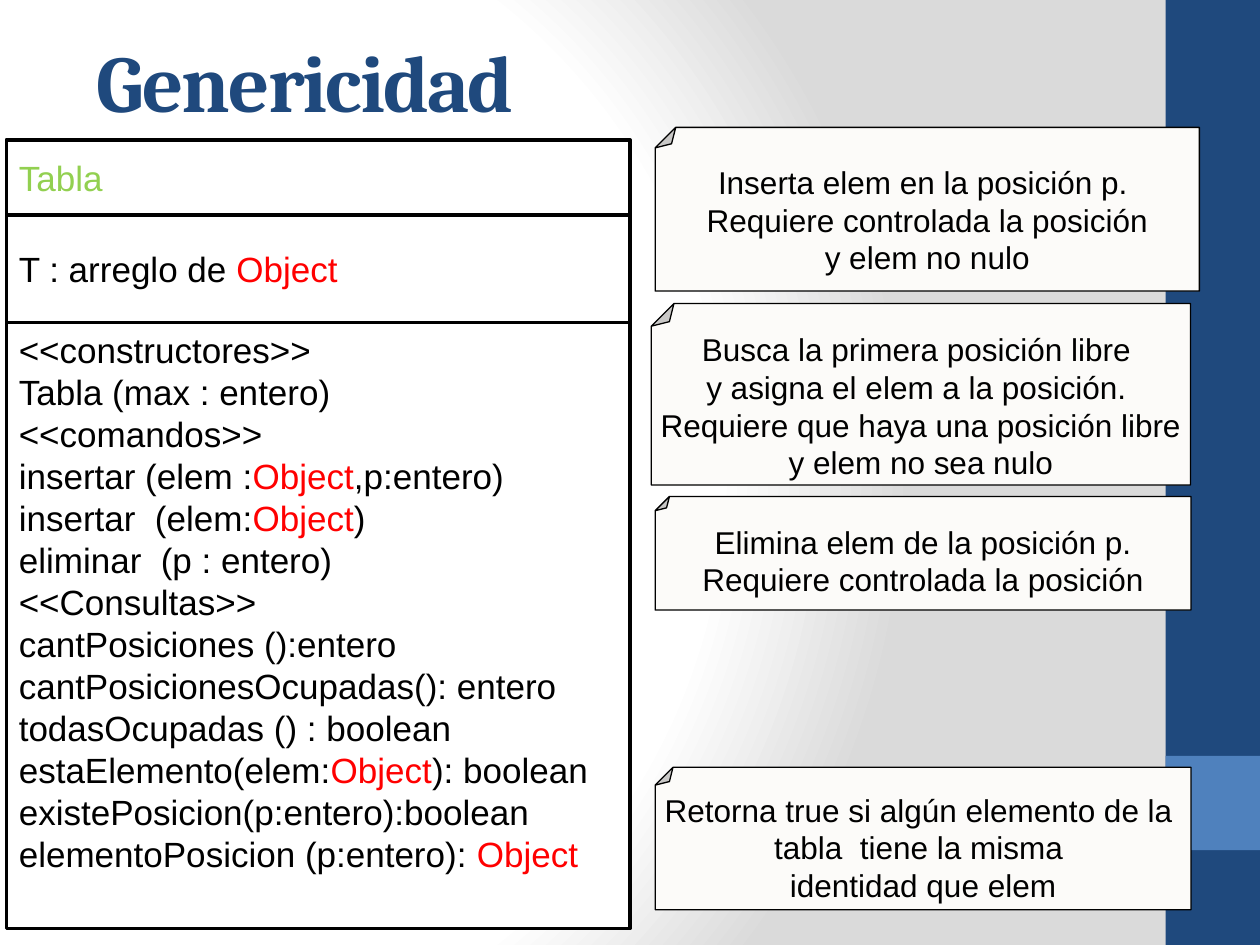
from dataclasses import dataclass

from lxml.etree import SubElement as Sub, fromstring
from pptx import Presentation
from pptx.dml.color import RGBColor as Rgb
from pptx.enum.shapes import MSO_SHAPE as Kind
from pptx.enum.text import MSO_ANCHOR as Anchor, PP_ALIGN as Align
from pptx.oxml.ns import nsdecls, qn
from pptx.util import Cm, Pt


@dataclass(frozen=True)
class Theme:
    navy: str = "1F497D"
    blue: str = "4F81BD"
    white: str = "FFFFFF"
    gray: str = "DADADA"
    paper: str = "FCFBF9"
    ink: str = "000000"
    green: str = "92D050"
    red: str = "FF0000"
    head: str = "Cambria"
    body: str = "Arial"
    title: int = 46
    code: int = 20
    note: int = 18


LOOK = Theme()
MARK = "Object"

ROWS = [
    (1.52, LOOK.green, Anchor.MIDDLE, ["Tabla"]),
    (2.16, LOOK.ink, Anchor.MIDDLE, ["T : arreglo de Object"]),
    (12.22, LOOK.ink, Anchor.TOP, [
        "<<constructores>>",
        "Tabla (max : entero)",
        "<<comandos>>",
        "insertar (elem :Object,p:entero)",
        "insertar  (elem:Object)",
        "eliminar  (p : entero)",
        "<<Consultas>>",
        "cantPosiciones ():entero",
        "cantPosicionesOcupadas(): entero",
        "todasOcupadas () : boolean",
        "estaElemento(elem:Object): boolean",
        "existePosicion(p:entero):boolean",
        "elementoPosicion (p:entero): Object",
    ]),
]

NOTES = [
    ((13.21, 2.57, 10.97, 3.3), [
        "Inserta elem en la posición p. ",
        "Requiere controlada la posición",
        "y elem no nulo",
    ]),
    ((13.13, 6.12, 10.87, 3.66), [
        "Busca la primera posición libre ",
        "y asigna el elem a la posición. ",
        "Requiere que haya una posición libre",
        "y elem no sea nulo",
    ]),
    ((13.21, 10.01, 10.8, 2.29), [
        " Elimina elem de la posición p. ",
        "Requiere controlada la posición",
    ]),
    ((13.21, 15.47, 10.8, 2.87), [
        "Retorna true si algún elemento de la ",
        "tabla  tiene la misma ",
        "identidad que elem",
    ]),
]


def apply(item, form):
    for name, value in form.items():
        setattr(item, name, value)


def paint(slide):
    stops = [(0, LOOK.white), (75, LOOK.white), (100, LOOK.gray)]
    marks = "".join(
        f'<a:gs pos="{at * 1000}"><a:srgbClr val="{tone}"/></a:gs>'
        for at, tone in stops)
    back = fromstring(
        f'<p:bg {nsdecls("p", "a")}><p:bgPr><a:gradFill rotWithShape="1">'
        f'<a:gsLst>{marks}</a:gsLst><a:path path="circle">'
        '<a:fillToRect l="20000" t="50000" r="100000" b="50000"/></a:path>'
        '</a:gradFill><a:effectLst/></p:bgPr></p:bg>')
    slide.element.find(qn("p:cSld")).insert(0, back)


def add_box(slide, kind, place, fill, width=0):
    box = slide.shapes.add_shape(kind, *map(Cm, place))
    box.shadow.inherit = False
    box.fill.solid()
    box.fill.fore_color.rgb = Rgb.from_string(fill)
    if width:
        box.line.color.rgb = Rgb.from_string(LOOK.ink)
        box.line.width = Pt(width)
    else:
        box.line.fill.background()
    return box


def add_run(para, text, tone, form):
    run = para.add_run()
    run.text = text
    apply(run.font, form)
    run.font.color.rgb = Rgb.from_string(tone)
    return run


def write(frame, lines, tone, size, align):
    form = {"name": LOOK.body, "size": Pt(size)}
    for num, line in enumerate(lines):
        para = frame.add_paragraph() if num else frame.paragraphs[0]
        para.alignment = align
        for part, hue in zip(line.partition(MARK), (tone, LOOK.red, tone)):
            if part:
                add_run(para, part, hue, form)


def add_class(slide, left, top, width):
    for high, tone, anchor, lines in ROWS:
        box = add_box(slide, Kind.RECTANGLE, (left, top, width, high),
                      LOOK.white, 2)
        apply(box.text_frame, {"vertical_anchor": anchor,
                               "word_wrap": anchor == Anchor.TOP})
        write(box.text_frame, lines, tone, LOOK.code, Align.LEFT)
        top += high


def add_note(slide, place, lines):
    note = add_box(slide, Kind.FOLDED_CORNER, place, LOOK.paper, 0.75)
    tree = note.element
    fold = next(tree.iter(qn("a:avLst")))
    Sub(fold, qn("a:gd"), name="adj", fmla="val 12500")
    form = next(tree.iter(qn("a:xfrm")))
    for side in ("flipH", "flipV"):
        form.set(side, "1")
    apply(note.text_frame, {"vertical_anchor": Anchor.MIDDLE,
                            "word_wrap": False})
    next(tree.iter(qn("a:bodyPr"))).set("rot", "10800000")
    write(note.text_frame, lines, LOOK.ink, LOOK.note, Align.CENTER)


def add_title(slide, place, text):
    frame = slide.shapes.add_textbox(*map(Cm, place)).text_frame
    frame.word_wrap = True
    form = {"name": LOOK.head, "size": Pt(LOOK.title), "bold": True}
    run = add_run(frame.paragraphs[0], text, LOOK.navy, form)
    run._r.get_or_add_rPr().set("spc", "-100")


def main():
    deck = Presentation()
    apply(deck, {"slide_width": Cm(25.4), "slide_height": Cm(19.05)})
    slide = deck.slides.add_slide(deck.slide_layouts[6])
    paint(slide)
    add_box(slide, Kind.RECTANGLE, (23.5, 0, 1.9, 19.05), LOOK.navy)
    add_box(slide, Kind.RECTANGLE, (23.5, 15.24, 1.9, 1.9), LOOK.blue)
    add_class(slide, 0.13, 2.82, 12.57)
    for place, lines in NOTES:
        add_note(slide, place, lines)
    add_title(slide, (1.7, 0.53, 22.81, 1.68), "Genericidad")
    deck.save("out.pptx")


if __name__ == "__main__":
    main()
